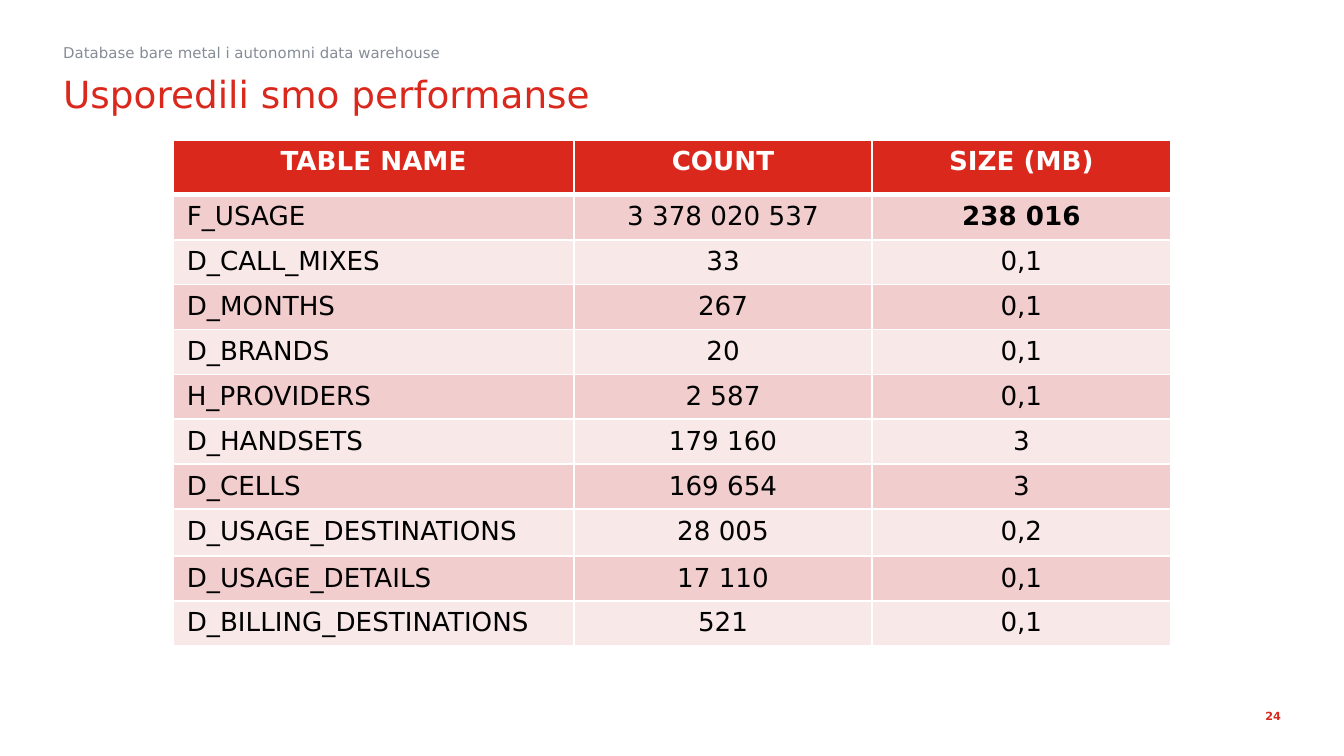
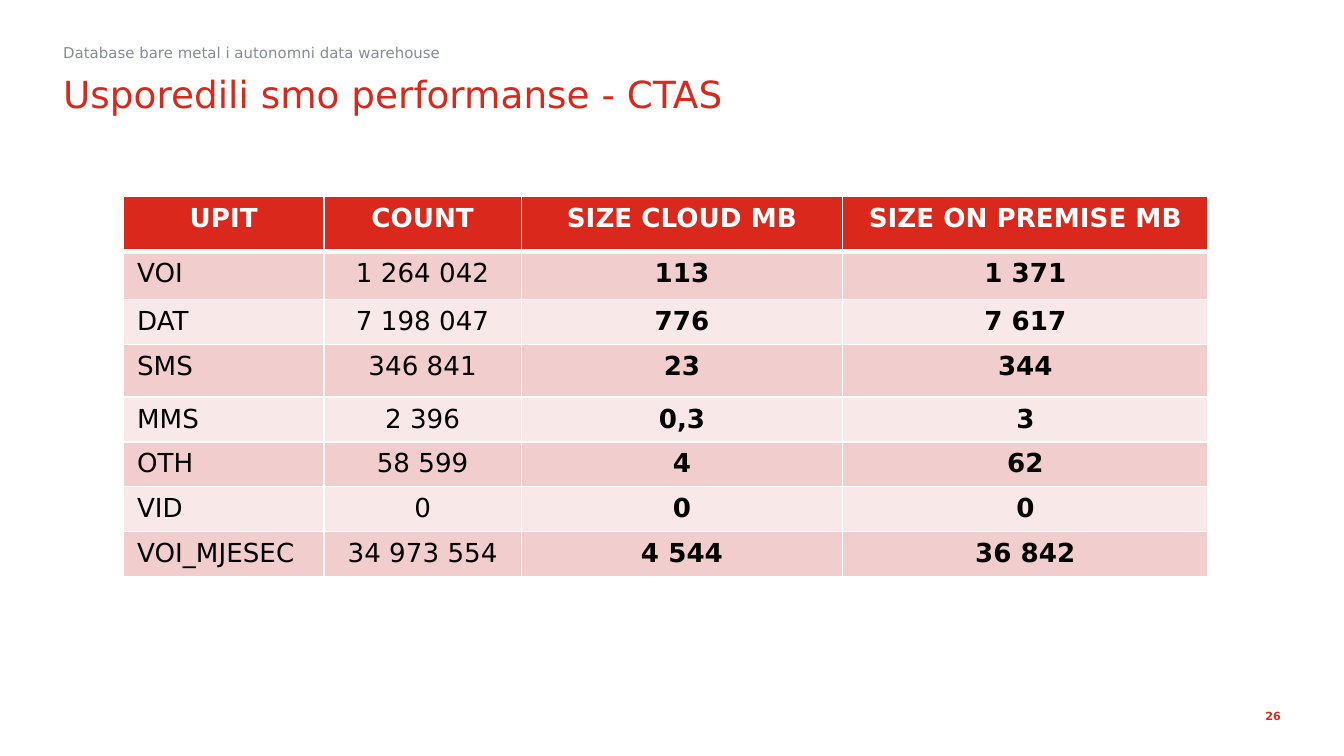
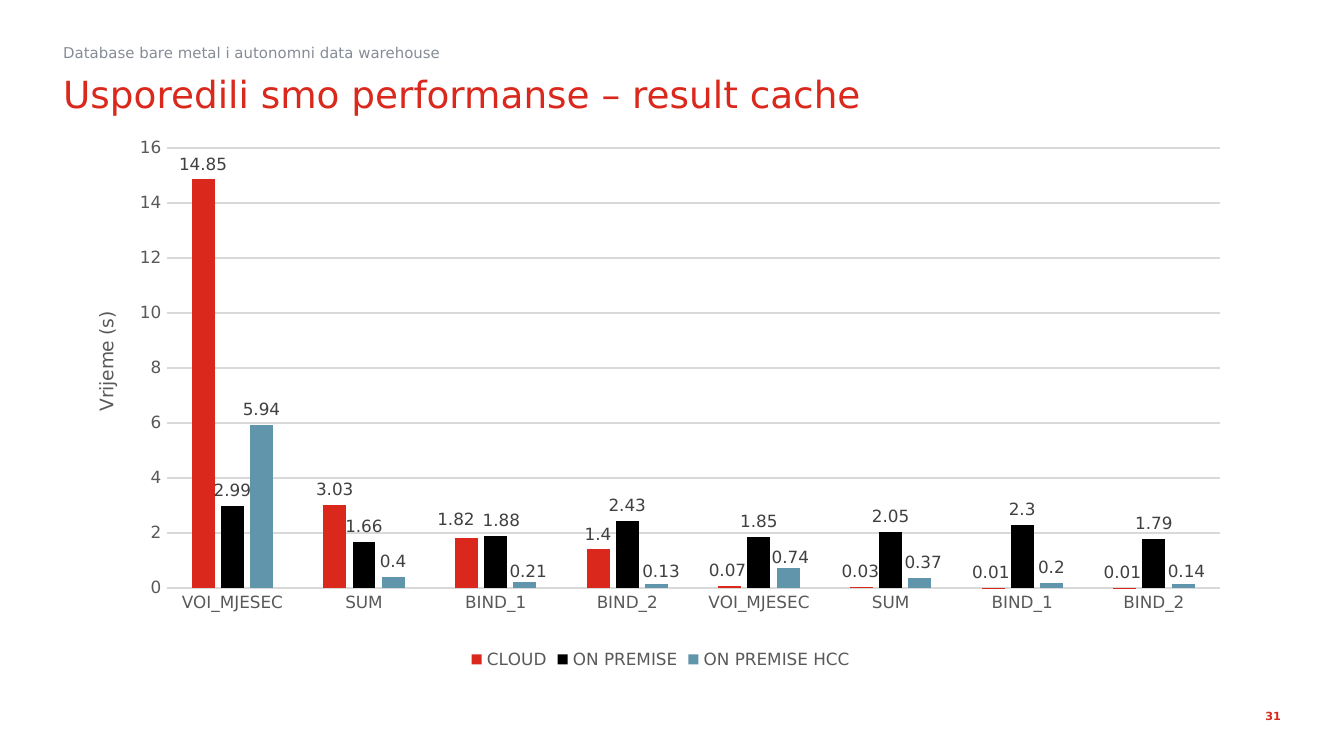
from lxml.etree import SubElement
from pptx import Presentation
from pptx.chart.data import CategoryChartData
from pptx.dml.color import RGBColor
from pptx.enum.chart import XL_CHART_TYPE as CT, XL_LABEL_POSITION as LP
from pptx.enum.chart import XL_LEGEND_POSITION as LG, XL_TICK_MARK as TM
from pptx.enum.text import MSO_ANCHOR as MA, PP_ALIGN as PA
from pptx.oxml.ns import qn
from pptx.util import Inches, Pt

COLORS = {
    "red": "DA281C", "gray": "868C96", "white": "FFFFFF", "black": "000000",
    "band_dark": "F1CDCD", "band_light": "F8E8E8", "blue": "6195AC",
    "axis": "595959", "label": "404040", "grid": "D9D9D9",
}
SECTION = "Database bare metal i autonomni data warehouse"
TITLE = "Usporedili smo performanse"
ROW = 2.8


def rgb(name):
    return RGBColor.from_string(COLORS[name])


def set_layout(parent, index, **values):
    for old in parent.findall(qn("c:layout")):
        parent.remove(old)
    layout = SubElement(parent, qn("c:layout"))
    parent.insert(index, layout)
    manual = SubElement(layout, qn("c:manualLayout"))
    for tag, value in values.items():
        SubElement(manual, qn(f"c:{tag}")).set("val", str(value))


def set_borders(cell, color, **widths):
    props = cell._tc.get_or_add_tcPr()
    for side, width in widths.items():
        line = SubElement(props, qn(f"a:ln{side}"), w=str(Pt(width)))
        fill = SubElement(line, qn("a:solidFill"))
        SubElement(fill, qn("a:srgbClr"), val=COLORS[color])


class Deck:
    font = "DejaVu Sans"
    unit = Inches(0.1)

    def __init__(self):
        self.prs = Presentation()
        self.prs.slide_width = Inches(10)
        self.prs.slide_height = self.prs.slide_width * 9 // 16
        self.s = None

    def grid(self, *cells):
        return [round(c * self.unit) for c in cells]

    def style(self, font, size, color, bold=False):
        font.name, font.size, font.bold = self.font, Pt(size), bold
        font.color.rgb = rgb(color)

    def run(self, p, text, size, color, bold=False, align=PA.LEFT):
        p.alignment = align
        r = p.add_run()
        r.text = text
        self.style(r.font, size, color, bold)

    def text(self, at, text, size, color, insets=(0, 0, 0, 0), anchor=MA.TOP,
             spacing=1.0, **kw):
        tf = self.s.shapes.add_textbox(*self.grid(*at)).text_frame
        tf.word_wrap = True
        tf.vertical_anchor = anchor
        (tf.margin_left, tf.margin_top,
         tf.margin_right, tf.margin_bottom) = self.grid(*insets)
        p = tf.paragraphs[0]
        p.line_spacing = spacing
        self.run(p, text, size, color, **kw)

    def slide(self, title, number):
        self.s = self.prs.slides.add_slide(self.prs.slide_layouts[6])
        self.text((77.7, 51.7, 18.6, 3.2), str(number), 6, "red",
                  (1, 0.5, 1, 0.6), MA.MIDDLE, bold=True, align=PA.RIGHT)
        self.text((4.7, 3.1, 90.6, 1.7), SECTION, 8, "gray", spacing=1.1)
        self.text((4.7, 4.8, 90.6, 8.2), title, 20, "red", (0, 0.5, 0, 0.5))

    def table(self, left, top, widths, heights, rows, is_bold):
        frame = self.s.shapes.add_table(
            len(rows), len(widths),
            *self.grid(left, top, sum(widths), sum(heights)))
        t = frame.table
        for col, width in zip(t.columns, self.grid(*widths)):
            col.width = width
        for row, height in zip(t.rows, self.grid(*heights)):
            row.height = height
        for i, values in enumerate(rows):
            fill = "red" if i == 0 else ("band_light", "band_dark")[i % 2]
            for j, value in enumerate(values):
                cell = t.cell(i, j)
                set_borders(cell, "white", L=1, R=1,
                            T=3 if i == 1 else 1, B=3 if i == 0 else 1)
                cell.fill.solid()
                cell.fill.fore_color.rgb = rgb(fill)
                self.run(cell.text_frame.paragraphs[0], value, 14,
                         "black" if i else "white",
                         bold=i == 0 or is_bold(i, j),
                         align=PA.LEFT if i and j == 0 else PA.CENTER)

    def columns(self, at, cats, series, axis_title, plot_area):
        data = CategoryChartData()
        data.categories = cats
        for name, _, values, _ in series:
            data.add_series(name, values)
        chart = self.s.shapes.add_chart(
            CT.COLUMN_CLUSTERED, *self.grid(*at), data).chart
        chart.has_title = False
        self.style(chart.font, 10, "black")
        chart.has_legend = True
        chart.legend.position = LG.BOTTOM
        chart.legend.include_in_layout = False
        self.style(chart.legend.font, 9, "axis")
        self.axes(chart.category_axis, chart.value_axis, axis_title)
        plot = chart.plots[0]
        plot.gap_width, plot.overlap = 219, -27
        plot.vary_by_categories = False
        for ser, (_, color, _, shifts) in zip(plot.series, series):
            self.series(ser, color, shifts)
        x, y, w, h = (share / 100 for share in plot_area)
        area = chart._chartSpace.xpath("c:chart/c:plotArea")[0]
        set_layout(area, 0, layoutTarget="inner", xMode="edge", yMode="edge",
                   x=x, y=y, w=w, h=h)
        set_layout(area.xpath("c:valAx/c:title")[0], 1,
                   xMode="edge", yMode="edge", x=0.01, y=0.33)

    def axes(self, cat, val, title):
        for axis in (cat, val):
            axis.major_tick_mark = axis.minor_tick_mark = TM.NONE
            self.style(axis.tick_labels.font, 9, "axis")
        val.minimum_scale, val.maximum_scale, val.major_unit = 0, 16, 2
        val.format.line.fill.background()
        val.has_major_gridlines = True
        for line in (cat.format.line, val.major_gridlines.format.line):
            line.color.rgb = rgb("grid")
            line.width = Pt(0.75)
        val.has_title = True
        self.run(val.axis_title.text_frame.paragraphs[0], title, 10, "axis",
                 align=PA.CENTER)

    def series(self, ser, color, shifts):
        ser.format.fill.solid()
        ser.format.fill.fore_color.rgb = rgb(color)
        ser.invert_if_negative = False
        labels = ser.data_labels
        labels.show_value = True
        labels.position = LP.OUTSIDE_END
        self.style(labels.font, 9, "label")
        for i, (dx, dy) in shifts.items():
            label = ser.points[i].data_label
            self.style(label.font, 9, "label")
            label.position = LP.OUTSIDE_END
            node = ser._element.xpath(
                f"c:dLbls/c:dLbl[c:idx/@val='{i}']")[0]
            set_layout(node, 1, x=dx / 100, y=dy / 100)


def main():
    deck = Deck()

    deck.slide(TITLE, 24)
    tables = [
        ("TABLE NAME", "COUNT", "SIZE (MB)"),
        ("F_USAGE", "3 378 020 537", "238 016"),
        ("D_CALL_MIXES", "33", "0,1"),
        ("D_MONTHS", "267", "0,1"),
        ("D_BRANDS", "20", "0,1"),
        ("H_PROVIDERS", "2 587", "0,1"),
        ("D_HANDSETS", "179 160", "3"),
        ("D_CELLS", "169 654", "3"),
        ("D_USAGE_DESTINATIONS", "28 005", "0,2"),
        ("D_USAGE_DETAILS", "17 110", "0,1"),
        ("D_BILLING_DESTINATIONS", "521", "0,1"),
    ]
    deck.table(12.9, 10.4, (29.8, 22.2, 22.2),
               [4.1] + [ROW] * 7 + [3.5] + [ROW] * 2, tables,
               lambda i, j: (i, j) == (1, 2))

    deck.slide(f"{TITLE} - CTAS", 26)
    queries = [
        ("UPIT", "COUNT", "SIZE CLOUD MB", "SIZE ON PREMISE MB"),
        ("VOI", "1 264 042", "113", "1 371"),
        ("DAT", "7 198 047", "776", "7 617"),
        ("SMS", "346 841", "23", "344"),
        ("MMS", "2 396", "0,3", "3"),
        ("OTH", "58 599", "4", "62"),
        ("VID", "0", "0", "0"),
        ("VOI_MJESEC", "34 973 554", "4 544", "36 842"),
    ]
    deck.table(9.2, 14.6, (14.9, 14.7, 23.9, 27.2),
               [4.1, 3.6, ROW, 3.9] + [ROW] * 4, queries,
               lambda i, j: j >= 2)

    deck.slide(f"{TITLE} – result cache", 31)
    timings = [
        ("CLOUD", "red", (14.85, 3.03, 1.82, 1.4, 0.07, 0.03, 0.01, 0.01),
         {2: (-0.9, -0.5), 4: (-0.2, 0), 5: (-0.1, 0), 6: (-0.2, 0),
          7: (-0.2, 0)}),
        ("ON PREMISE", "black",
         (2.99, 1.66, 1.88, 2.43, 1.85, 2.05, 2.3, 1.79), {2: (0.5, 0)}),
        ("ON PREMISE HCC", "blue",
         (5.94, 0.4, 0.21, 0.13, 0.74, 0.37, 0.2, 0.14),
         {2: (0.3, 0.8), 3: (0.4, 0.5), 4: (0.2, 1), 5: (0.3, 0),
          7: (0.3, 0.5)}),
    ]
    deck.columns((5.9, 9.5, 86.5, 40.7),
                 ("VOI_MJESEC", "SUM", "BIND_1", "BIND_2") * 2,
                 timings, "Vrijeme (s)", (7.5, 3.7, 90.6, 80.5))

    deck.prs.save("out.pptx")


if __name__ == "__main__":
    main()
